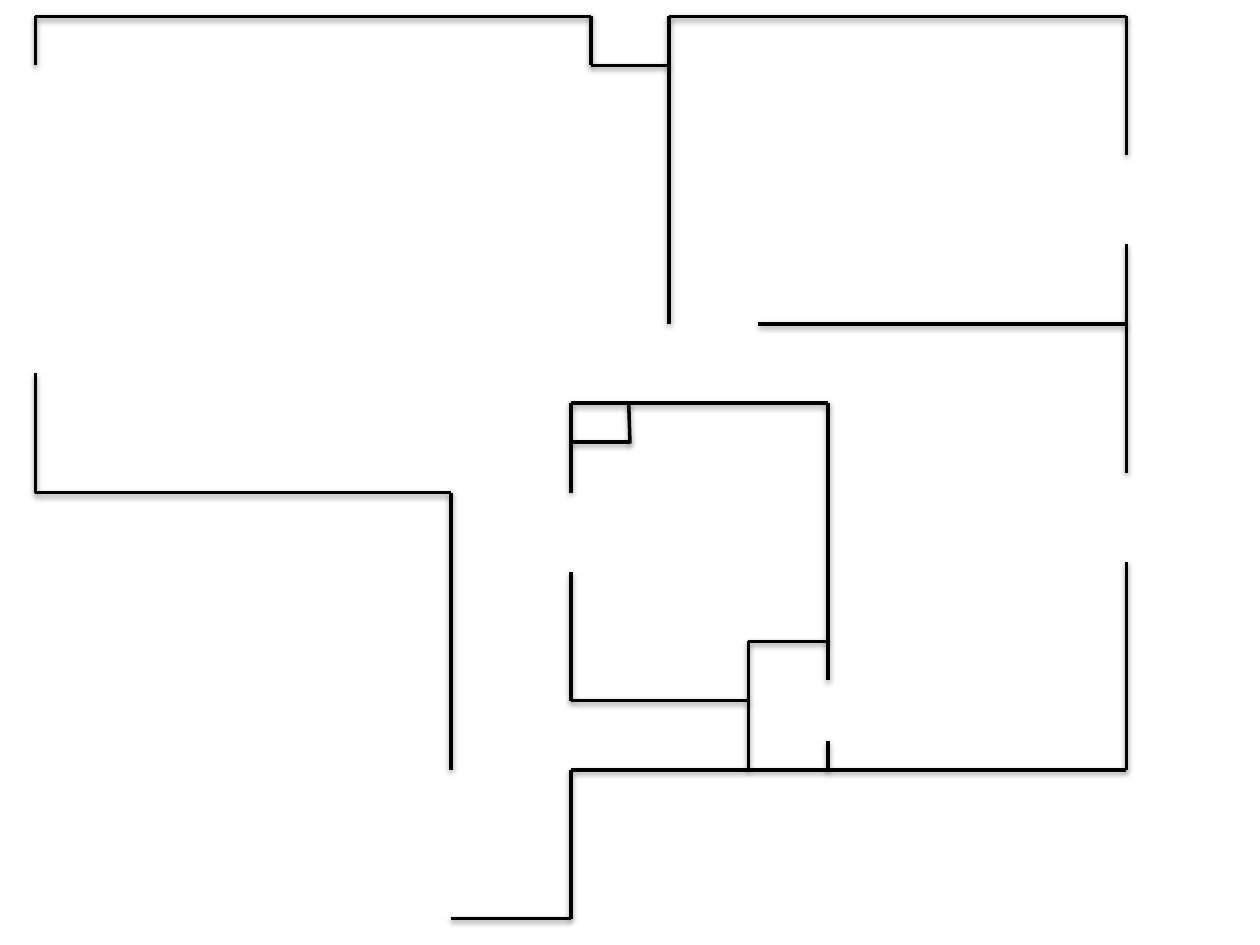
from dataclasses import dataclass
from itertools import pairwise

from lxml import etree
from pptx import Presentation
from pptx.dml.color import RGBColor as RGB
from pptx.enum.shapes import MSO_CONNECTOR as Link
from pptx.oxml import parse_xml
from pptx.oxml.ns import nsdecls, qn
from pptx.util import Emu, Pt

PX = 9144  # EMU in one px, 100 px to the inch


@dataclass(frozen=True)
class Theme:
    ink: str = "000000"
    width: int = 2      # pt
    alpha: int = 38     # percent
    blur: float = 3.15  # pt
    drop: float = 1.57  # pt


THEME = Theme()

# Each run of walls is a chain of corners, measured from the plan's corner
WALLS = {
    "living": [
        [(0, 39), (0, 0), (441, 0), (441, 39), (503, 39)],
        [(0, 283), (0, 378), (330, 378), (330, 598)],
    ],
    "entry": [
        [(330, 716), (425, 716), (425, 598), (566, 598), (629, 598), (866, 598)],
    ],
    "east": [
        [(503, 244), (503, 0), (866, 0), (866, 110)],
        [(574, 244), (866, 244)],
        [(866, 181), (866, 244), (866, 362)],
        [(866, 433), (866, 598)],
    ],
    "core": [
        [(425, 378), (425, 307), (629, 307), (629, 527)],
        [(425, 441), (425, 543), (566, 543)],
    ],
    "closet": [
        [(566, 598), (566, 496), (629, 496)],
        [(629, 575), (629, 598)],
    ],
    "shaft": [
        [(425, 338), (472, 338)],
        [(472, 339), (471, 307)],
    ],
}


def add_shade(line):
    """Give a line the soft shadow that falls straight down."""
    fx = parse_xml(f"<a:effectLst {nsdecls('a')}/>")
    shade = etree.SubElement(
        fx, qn("a:outerShdw"), blurRad=str(Pt(THEME.blur)),
        dist=str(Pt(THEME.drop)), dir="5400000", rotWithShape="0")
    tint = etree.SubElement(shade, qn("a:srgbClr"), val=THEME.ink)
    etree.SubElement(tint, qn("a:alpha"), val=str(THEME.alpha * 1000))
    line._element.spPr.append(fx)


def add_wall(slide, start, end):
    ends = [Emu(n * PX) for n in (*start, *end)]
    wall = slide.shapes.add_connector(Link.STRAIGHT, *ends)
    wall.line.color.rgb = RGB.from_string(THEME.ink)
    wall.line.width = Pt(THEME.width)
    add_shade(wall)


def add_plan(slide, left, top):
    """Draw every room's walls from the plan's top left corner."""
    for room in WALLS.values():
        for chain in room:
            spots = [(left + x, top + y) for x, y in chain]
            for pair in pairwise(spots):
                add_wall(slide, *sorted(pair))


def main():
    deck = Presentation()
    deck.slide_width, deck.slide_height = Emu(1000 * PX), Emu(750 * PX)
    slide = deck.slides.add_slide(deck.slide_layouts[6])
    add_plan(slide, 28, 13)
    deck.save("out.pptx")


if __name__ == "__main__":
    main()
